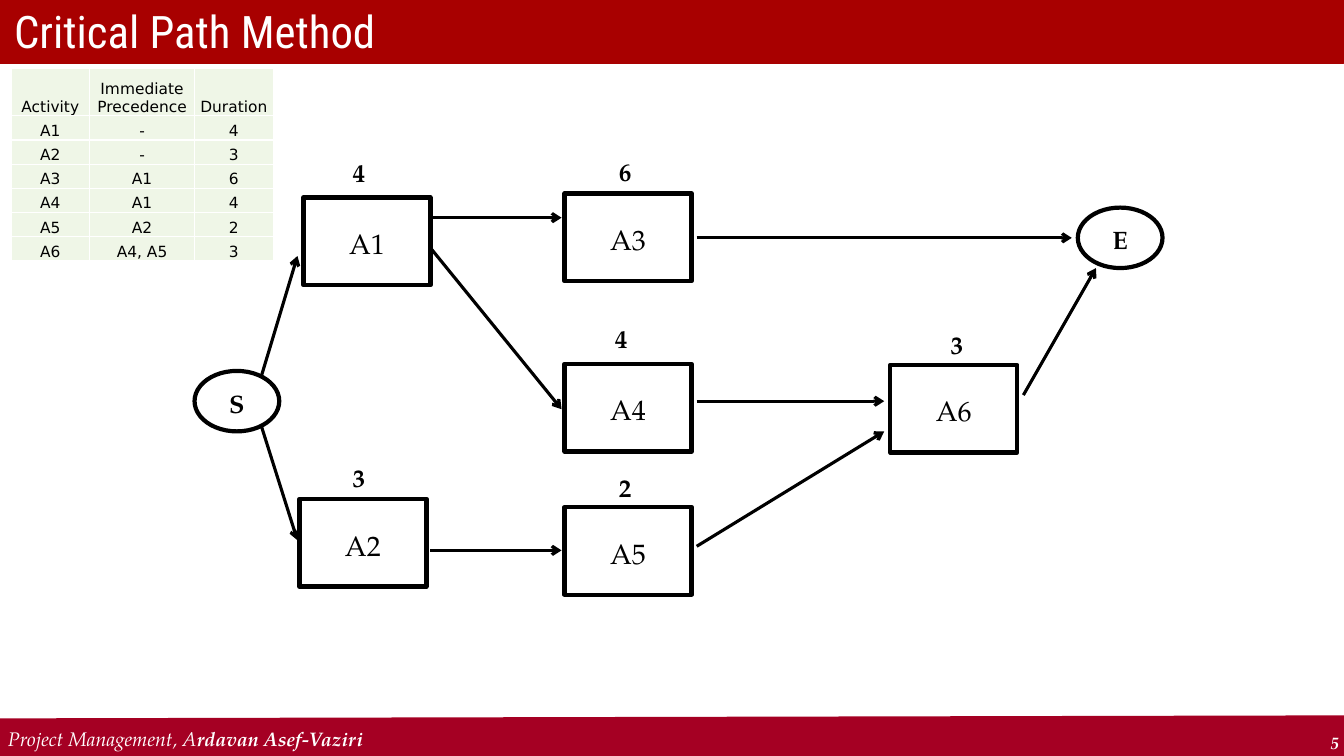
from dataclasses import dataclass

from lxml.etree import SubElement
from pptx import Presentation
from pptx.dml.color import RGBColor
from pptx.enum.shapes import MSO_CONNECTOR, MSO_SHAPE
from pptx.enum.text import MSO_ANCHOR, PP_ALIGN
from pptx.oxml.ns import qn
from pptx.util import Inches, Pt

COLORS = {"band": "A80000", "footer": "A50023", "ink": "000000",
          "paper": "FFFFFF", "cell": "EFF6E7"}
SERIF, SANS, HEADING = "TeX Gyre Pagella", "DejaVu Sans", "Roboto Condensed"
BOX_SIZE = (1.26, 0.87)
EVENT_SIZE = (0.84, 0.6)


@dataclass
class Activity:
    name: str
    left: float
    top: float
    duration: str
    duration_left: float
    duration_top: float


@dataclass
class Event:
    name: str
    left: float
    top: float


@dataclass
class Arrow:
    start: tuple[float, float]
    end: tuple[float, float]


ACTIVITIES = [
    Activity("A1", 3.01, 1.96, "4", 3.4, 1.51),
    Activity("A3", 5.6, 1.92, "6", 6.04, 1.5),
    Activity("A4", 5.6, 3.61, "4", 6, 3.16),
    Activity("A6", 8.83, 3.62, "3", 9.33, 3.22),
    Activity("A5", 5.6, 5.03, "2", 6.04, 4.64),
    Activity("A2", 2.97, 4.95, "3", 3.4, 4.54),
]
EVENTS = [Event("S", 1.93, 3.68), Event("E", 10.69, 2.06)]
ARROWS = [
    Arrow((2.59, 3.74), (2.95, 2.54)),
    Arrow((2.59, 4.22), (2.95, 5.36)),
    Arrow((4.27, 2.16), (5.57, 2.16)),
    Arrow((4.27, 2.46), (5.57, 4.06)),
    Arrow((4.27, 5.46), (5.57, 5.46)),
    Arrow((6.91, 3.98), (8.77, 3.98)),
    Arrow((6.91, 5.42), (8.77, 4.28)),
    Arrow((6.91, 2.36), (10.63, 2.36)),
    Arrow((10.15, 3.92), (10.87, 2.66)),
]
PRECEDENCE = [
    ("Activity", "Immediate Precedence", "Duration"),
    ("A1", "-", "4"),
    ("A2", "-", "3"),
    ("A3", "A1", "6"),
    ("A4", "A1", "4"),
    ("A5", "A2", "2"),
    ("A6", "A4, A5", "3"),
]


def color(name: str) -> RGBColor:
    return RGBColor.from_string(COLORS[name])


def style(run, size: float, font: str, ink: str = "ink",
          bold: bool = False, italic: bool = False) -> None:
    run.font.size, run.font.name = Pt(size), font
    run.font.bold, run.font.italic = bold, italic
    run.font.color.rgb = color(ink)


def add_label(slide, text: str, left: float, top: float, width: float,
              height: float, align=PP_ALIGN.LEFT, wrap: bool = True):
    frame = slide.shapes.add_textbox(
        Inches(left), Inches(top), Inches(width), Inches(height)).text_frame
    frame.word_wrap = wrap
    frame.text = text
    frame.paragraphs[0].alignment = align
    return frame.paragraphs[0]


def add_node(slide, kind, name: str, left: float, top: float,
             size: tuple[float, float], points: float, bold: bool) -> None:
    node = slide.shapes.add_shape(
        kind, Inches(left), Inches(top), Inches(size[0]), Inches(size[1]))
    node.shadow.inherit = False
    node.fill.background()
    node.line.color.rgb = color("ink")
    node.line.width = Pt(3)
    frame = node.text_frame
    frame.margin_top, frame.margin_bottom = Inches(0.04), 0
    frame.vertical_anchor = MSO_ANCHOR.MIDDLE
    frame.text = name
    frame.paragraphs[0].alignment = PP_ALIGN.CENTER
    style(frame.paragraphs[0].runs[0], points, SERIF, bold=bold)


def add_line(slide, start: tuple[float, float], end: tuple[float, float],
             ink: str, width: float, arrow: bool = False) -> None:
    line = slide.shapes.add_connector(
        MSO_CONNECTOR.STRAIGHT, *(Inches(value) for value in start + end))
    line.line.color.rgb = color(ink)
    line.line.width = Pt(width)
    if arrow:
        SubElement(line.line._get_or_add_ln(), qn("a:tailEnd"), type="arrow")
    SubElement(line._element.spPr, qn("a:effectLst"))


def add_borders(cell) -> None:
    properties = cell._tc.get_or_add_tcPr()
    for index, side in enumerate(("lnL", "lnR", "lnT", "lnB")):
        border = properties.makeelement(qn(f"a:{side}"), {"w": str(Pt(1))})
        properties.insert(index, border)
        fill = SubElement(border, qn("a:solidFill"))
        SubElement(fill, qn("a:srgbClr"), val=COLORS["paper"])


def add_precedence_table(slide) -> None:
    table = slide.shapes.add_table(
        len(PRECEDENCE), 3, Inches(0.11), Inches(0.68),
        Inches(2.6), Inches(1.89)).table
    table.first_row = table.horz_banding = False
    for column, width in zip(table.columns, (0.78, 1.04, 0.78)):
        column.width = Inches(width)
    for index, (row, entries) in enumerate(zip(table.rows, PRECEDENCE)):
        row.height = Inches(0.24 if index else 0.47)
        for cell, entry in zip(row.cells, entries):
            cell.fill.solid()
            cell.fill.fore_color.rgb = color("cell")
            cell.margin_left = cell.margin_right = cell.margin_top = Inches(0.01)
            cell.margin_bottom = 0
            cell.vertical_anchor = MSO_ANCHOR.BOTTOM
            cell.text = entry
            paragraph = cell.text_frame.paragraphs[0]
            paragraph.alignment = PP_ALIGN.CENTER
            style(paragraph.runs[0], 11, SANS)
            add_borders(cell)


def add_heading(slide) -> None:
    band = slide.shapes.add_shape(
        MSO_SHAPE.RECTANGLE, 0, Inches(-0.01), Inches(13.33), Inches(0.64))
    band.shadow.inherit = False
    band.fill.solid()
    band.fill.fore_color.rgb = band.line.color.rgb = color("band")
    band.line.width = Pt(0.75)

    heading = slide.shapes.title
    band._element.addnext(heading._element)  # the title sits above its band
    heading.left, heading.top = Inches(0.04), Inches(0.01)
    heading.width, heading.height = Inches(13.3), Inches(0.59)
    heading.text_frame.text = "Critical Path Method"
    heading.text_frame.vertical_anchor = MSO_ANCHOR.MIDDLE
    heading.text_frame.paragraphs[0].alignment = PP_ALIGN.LEFT
    style(heading.text_frame.paragraphs[0].runs[0], 32, HEADING, "paper")


def add_footer(slide) -> None:
    add_line(slide, (-0.01, 7.33), (13.36, 7.3), "footer", 29.25)
    page = add_label(slide, "5", 12.38, 7.22, 1, 0.3, PP_ALIGN.RIGHT)
    style(page.runs[0], 12, SERIF, "paper", bold=True, italic=True)
    credit = add_label(slide, "Project Management, A", -0.02, 7.16, 10.45, 0.34)
    credit.add_run().text = "rdavan Asef-Vaziri"
    for run, bold in zip(credit.runs, (False, True)):
        style(run, 14, SERIF, "paper", bold=bold, italic=True)


def main() -> None:
    deck = Presentation()
    deck.slide_width, deck.slide_height = Inches(13.33), Inches(7.5)
    slide = deck.slides.add_slide(deck.slide_layouts[5])

    # Frame of the slide
    add_footer(slide)
    add_heading(slide)

    # Activity network
    for activity in ACTIVITIES:
        add_node(slide, MSO_SHAPE.RECTANGLE, activity.name, activity.left,
                 activity.top, BOX_SIZE, 20, bold=False)
        duration = add_label(
            slide, activity.duration, activity.duration_left,
            activity.duration_top, 0.33, 0.4, wrap=False)
        style(duration.runs[0], 18, SERIF, bold=True)
    for event in EVENTS:
        add_node(slide, MSO_SHAPE.OVAL, event.name, event.left, event.top,
                 EVENT_SIZE, 18, bold=True)
    for arrow in ARROWS:
        add_line(slide, arrow.start, arrow.end, "ink", 2.25, arrow=True)

    # Precedence table
    add_precedence_table(slide)
    deck.save("out.pptx")


if __name__ == "__main__":
    main()
